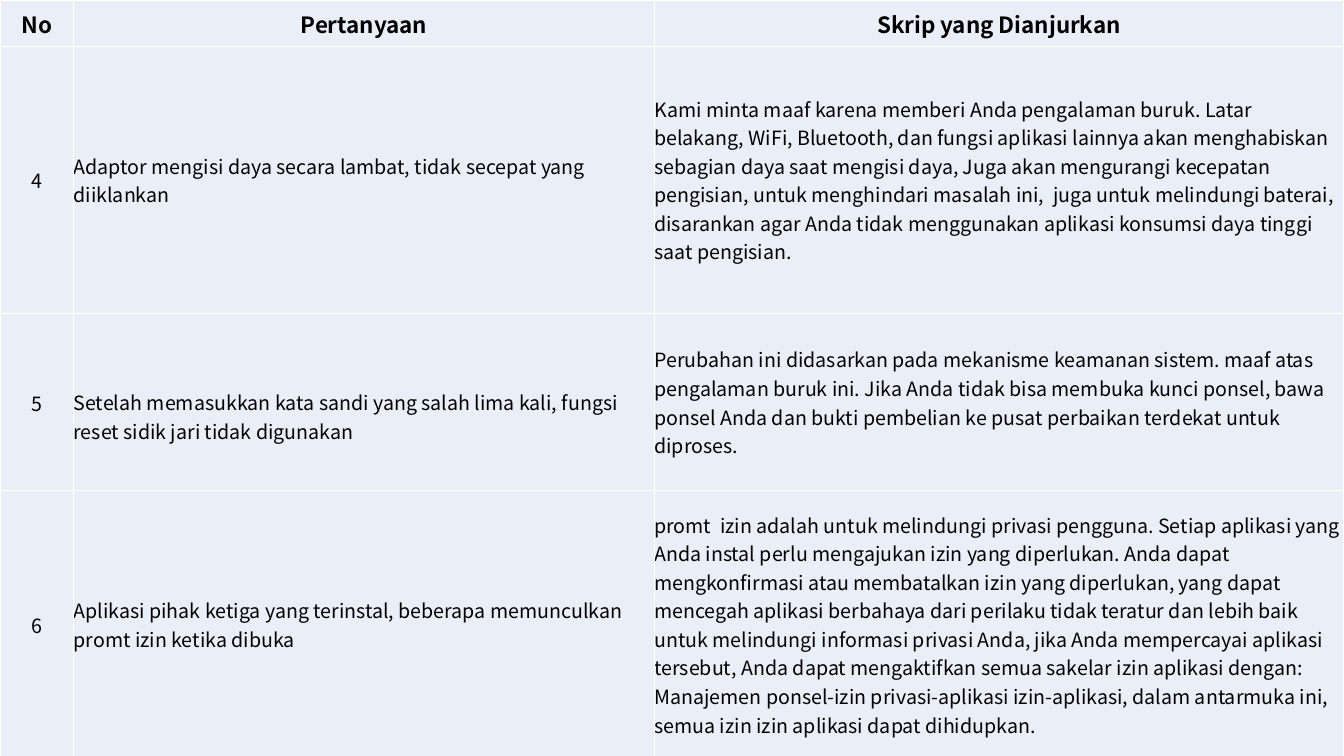
"""Build a slide with a table of customer questions and recommended scripts."""
import pptx
import pptx.dml.color
import pptx.enum.text
import pptx.oxml
import pptx.oxml.ns
import pptx.util
from pptx.util import Inches

HEADINGS = ("No", "Pertanyaan", "Skrip yang Dianjurkan")
QUESTIONS = [
    (
        "4",
        "Adaptor mengisi daya secara lambat, tidak secepat yang diiklankan",
        "Kami minta maaf karena memberi Anda pengalaman buruk. Latar belakang, WiFi, "
        "Bluetooth, dan fungsi aplikasi lainnya akan menghabiskan sebagian daya saat "
        "mengisi daya, Juga akan mengurangi kecepatan pengisian, untuk menghindari "
        "masalah ini,  juga untuk melindungi baterai, disarankan agar Anda tidak "
        "menggunakan aplikasi konsumsi daya tinggi saat pengisian.",
    ),
    (
        "5",
        "Setelah memasukkan kata sandi yang salah lima kali, fungsi reset sidik jari "
        "tidak digunakan",
        "Perubahan ini didasarkan pada mekanisme keamanan sistem. maaf atas pengalaman "
        "buruk ini. Jika Anda tidak bisa membuka kunci ponsel, bawa ponsel Anda dan "
        "bukti pembelian ke pusat perbaikan terdekat untuk diproses.",
    ),
    (
        "6",
        "Aplikasi pihak ketiga yang terinstal, beberapa memunculkan promt izin ketika "
        "dibuka",
        "promt  izin adalah untuk melindungi privasi pengguna. Setiap aplikasi yang Anda "
        "instal perlu mengajukan izin yang diperlukan. Anda dapat mengkonfirmasi atau "
        "membatalkan izin yang diperlukan, yang dapat mencegah aplikasi berbahaya dari "
        "perilaku tidak teratur dan lebih baik untuk melindungi informasi privasi Anda, "
        "jika Anda mempercayai aplikasi tersebut, Anda dapat mengaktifkan semua sakelar "
        "izin aplikasi dengan:\n"
        "Manajemen ponsel-izin privasi-aplikasi izin-aplikasi, dalam antarmuka ini, "
        "semua izin izin aplikasi dapat dihidupkan.",
    ),
]
COLUMN_WIDTHS = (0.73, 5.76, 6.84)
ROW_HEIGHTS = (0.46, 2.65, 1.76, 2.65)
LOWERED_CELL = (2, 1)
LOWERED_TOP = 0.28

FONT = "Noto Sans CJK SC"
BLACK = pptx.dml.color.RGBColor(0x00, 0x00, 0x00)
PALE_BLUE = pptx.dml.color.RGBColor(0xEA, 0xEF, 0xF7)
WHITE = pptx.dml.color.RGBColor(0xFF, 0xFF, 0xFF)


def add_borders(cell):
    properties = cell._tc.get_or_add_tcPr()
    for position, side in enumerate(("lnL", "lnR", "lnT", "lnB")):
        border = pptx.oxml.parse_xml(
            f'<a:{side} {pptx.oxml.ns.nsdecls("a")} w="{pptx.util.Pt(1)}">'
            f'<a:solidFill><a:srgbClr val="{WHITE}"/></a:solidFill></a:{side}>'
        )
        properties.insert(position, border)


def fill_cell(cell, text, is_heading, is_centred):
    inset = Inches(0.01 if is_centred else 0)
    cell.margin_left = cell.margin_right = cell.margin_top = inset
    cell.margin_bottom = 0
    cell.vertical_anchor = pptx.enum.text.MSO_ANCHOR.MIDDLE
    cell.fill.solid()
    cell.fill.fore_color.rgb = PALE_BLUE
    add_borders(cell)
    cell.text_frame.text = text
    align = pptx.enum.text.PP_ALIGN
    for paragraph in cell.text_frame.paragraphs:
        paragraph.alignment = align.CENTER if is_centred else align.LEFT
        paragraph.font.name = FONT
        paragraph.font.size = pptx.util.Pt(16 if is_heading else 14)
        paragraph.font.bold = is_heading
        paragraph.font.color.rgb = BLACK


def main():
    deck = pptx.Presentation()
    deck.slide_width, deck.slide_height = Inches(13.33), Inches(7.5)
    slide = deck.slides.add_slide(deck.slide_layouts[6])
    slide.background.fill.solid()
    slide.background.fill.fore_color.rgb = BLACK

    rows = [HEADINGS, *QUESTIONS]
    faq = slide.shapes.add_table(
        len(rows), len(HEADINGS), 0, 0,
        Inches(sum(COLUMN_WIDTHS)), Inches(sum(ROW_HEIGHTS)),
    ).table
    for column, width in zip(faq.columns, COLUMN_WIDTHS):
        column.width = Inches(width)
    for row, height in zip(faq.rows, ROW_HEIGHTS):
        row.height = Inches(height)
    for r, texts in enumerate(rows):
        for c, text in enumerate(texts):
            fill_cell(faq.cell(r, c), text, r == 0, r == 0 or c == 0)
    faq.cell(*LOWERED_CELL).margin_top = Inches(LOWERED_TOP)

    deck.save("out.pptx")


if __name__ == "__main__":
    main()
